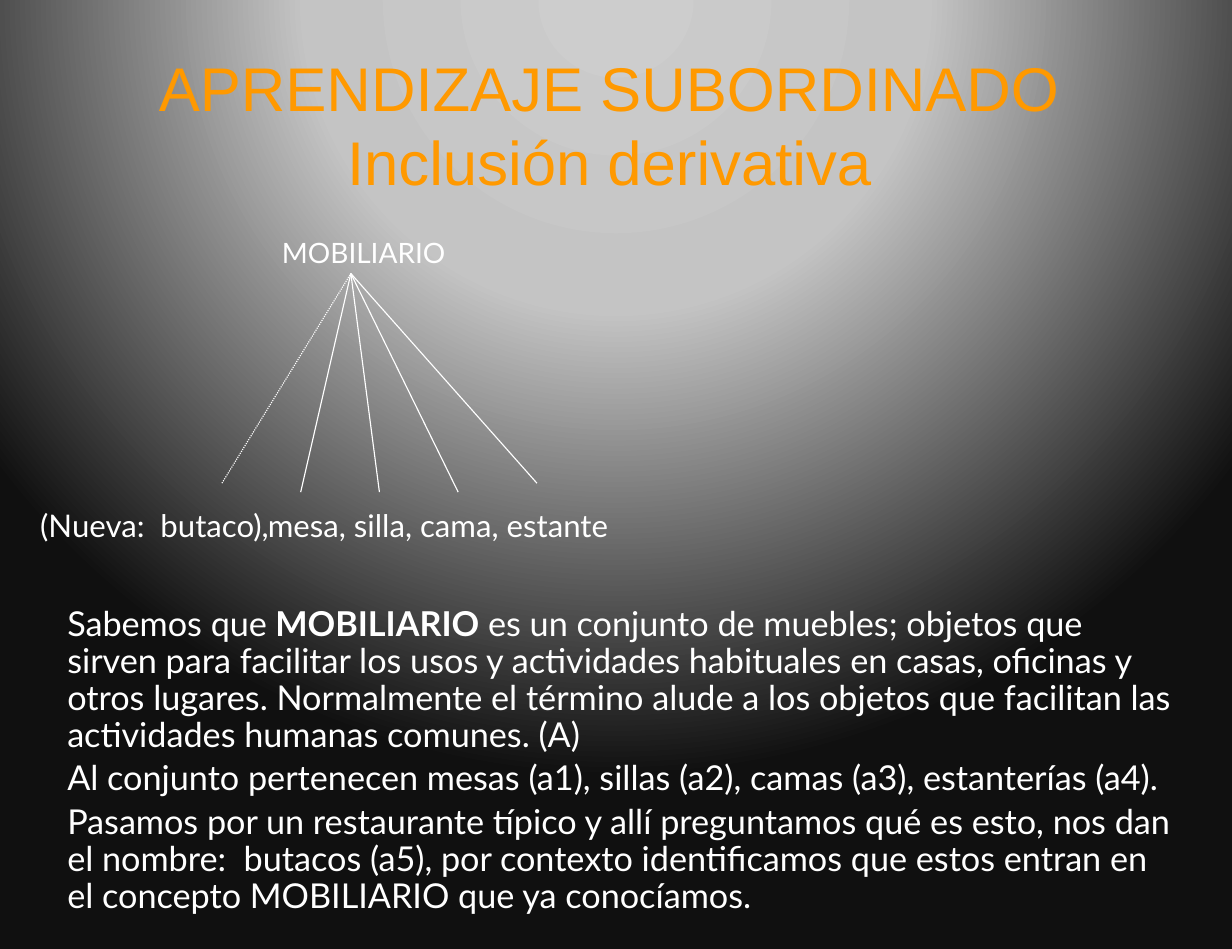
"""Build the slide on subordinate learning and derivative inclusion."""
from dataclasses import dataclass

from lxml.etree import SubElement
from pptx import Presentation
from pptx.dml.color import RGBColor
from pptx.enum.dml import MSO_LINE
from pptx.enum.shapes import MSO_CONNECTOR
from pptx.enum.text import MSO_ANCHOR, PP_ALIGN
from pptx.oxml import parse_xml
from pptx.oxml.ns import qn
from pptx.util import Inches, Pt


@dataclass(frozen=True)
class Theme:
    white: str = "FFFFFF"
    orange: str = "FF9900"
    glow: tuple = ((0, "CDCDCD"), (40, "C4C4C4"), (100, "101010"))
    head: str = "Arial"
    body: str = "Lato"
    title: float = 39.6
    text: float = 22
    leaf: float = 20
    root: float = 18
    rule: float = 0.75


theme = Theme()


def add_text(paras, box, size, font=theme.body, color=theme.white,
             align=PP_ALIGN.LEFT, anchor=MSO_ANCHOR.TOP, wrap=True,
             inset=(0.1, 0.05), gap=0, spacing=1.0):
    """Add a text box; each paragraph is a list of (text, bold) runs."""
    frame = slide.shapes.add_textbox(*map(Inches, box)).text_frame
    frame.word_wrap, frame.vertical_anchor = wrap, anchor
    frame.margin_left = frame.margin_right = Inches(inset[0])
    frame.margin_top = frame.margin_bottom = Inches(inset[1])
    for num, runs in enumerate(paras):
        para = frame.add_paragraph() if num else frame.paragraphs[0]
        para.alignment, para.line_spacing = align, spacing
        para.space_before = Pt(gap if num else 0)
        for words, bold in runs:
            for row, line in enumerate(words.split("\n")):
                if row:
                    para.add_line_break()
                run = para.add_run()
                run.text = line
                run.font.name, run.font.size, run.font.bold = font, Pt(size), bold
                run.font.color.rgb = RGBColor.from_string(color)


deck = Presentation()
deck.slide_width, deck.slide_height = Inches(10.99), Inches(8.465)
slide = deck.slides.add_slide(deck.slide_layouts[6])

slide.background.fill.solid()
plain = next(slide.element.iter(qn("a:solidFill")))
stops = "".join(f'<a:gs pos="{pos * 1000}"><a:srgbClr val="{tone}"/></a:gs>'
                for pos, tone in theme.glow)
plain.getparent().replace(plain, parse_xml(
    '<a:gradFill xmlns:a="http://schemas.openxmlformats.org/drawingml/2006/main" '
    f'rotWithShape="1"><a:gsLst>{stops}</a:gsLst><a:path path="circle">'
    '<a:fillToRect l="50000" t="-80000" r="50000" b="180000"/></a:path></a:gradFill>'))

add_text([[("APRENDIZAJE SUBORDINADO\nInclusión derivativa", False)]],
         (0.49, 0.4, 9.89, 1.41), theme.title, font=theme.head, color=theme.orange,
         align=PP_ALIGN.CENTER, anchor=MSO_ANCHOR.MIDDLE, inset=(0.11, 0.06))

story = [
    [("Sabemos que", False), (" MOBILIARIO", True),
     (" es un conjunto de muebles; objetos que sirven para facilitar los usos y "
      "actividades habituales en casas, oficinas y otros lugares. Normalmente el "
      "término alude a los objetos que facilitan las actividades humanas comunes. (A)",
      False)],
    [("Al conjunto pertenecen mesas (a1), sillas (a2), camas (a3), estanterías (a4).",
      False)],
    [("Pasamos por un restaurante típico y allí preguntamos qué es esto, nos dan el "
      "nombre:  butacos (a5), por contexto identificamos que estos entran en el "
      "concepto MOBILIARIO que ya conocíamos.", False)],
]
add_text(story, (0.49, 5.35, 10.12, 3.11), theme.text,
         inset=(0.11, 0.06), gap=theme.text * 0.2, spacing=0.9)

for num, foot in enumerate((4.31, 4.39, 4.39, 4.39, 4.31)):
    ray = slide.shapes.add_connector(
        MSO_CONNECTOR.STRAIGHT, Inches(1.98 + 2.81 * num / 4), Inches(foot),
        Inches(3.13), Inches(2.44))
    ray.line.color.rgb = RGBColor.from_string(theme.white)
    ray.line.width = Pt(theme.rule)
    if num == 0:
        ray.line.dash_style = MSO_LINE.ROUND_DOT
    SubElement(ray.element.spPr, qn("a:effectLst"))

add_text([[("MOBILIARIO", False)]], (2.13, 2.05, 2.23, 0.4), theme.root,
         align=PP_ALIGN.CENTER)
for words, left, width in (("mesa, silla, cama, estante", 2.29, 3.29),
                           ("(Nueva:  butaco),", 0.26, 2.28)):
    add_text([[(words, False)]], (left, 4.47, width, 0.44), theme.leaf, wrap=False)

deck.save("out.pptx")
